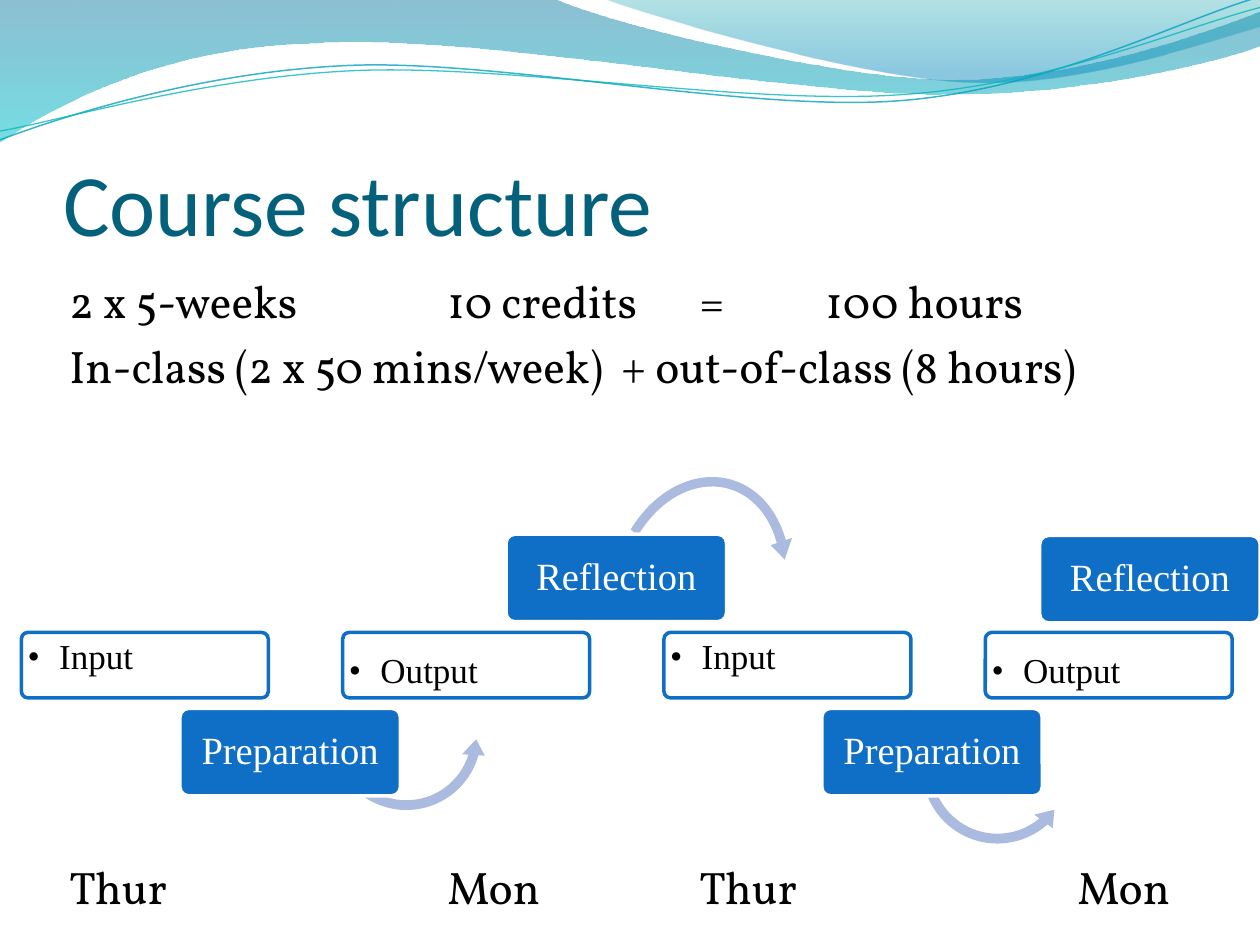
import math
from dataclasses import dataclass
from typing import Optional

import pptx
import pptx.dml.color
import pptx.enum.shapes
import pptx.enum.text
import pptx.oxml
import pptx.oxml.ns
import pptx.util

Pt = pptx.util.Pt
qn = pptx.oxml.ns.qn
Preset = pptx.enum.shapes.MSO_SHAPE
Anchor = pptx.enum.text.MSO_ANCHOR
Align = pptx.enum.text.PP_ALIGN

BLUE, PALE_BLUE, WHITE, BLACK = "0F6FC6", "ABBBDF", "FFFFFF", "000000"
SERIF = "Times New Roman"
STEP_LEFT, STEP_TOP, STEP_PITCH = 12.24, 361.4, 183.6


@dataclass
class Wave:
    start: tuple
    segments: list  # two numbers: straight line; six numbers: Bezier curve
    stops: tuple = ()  # (position, colour, opacity)
    line: Optional[tuple] = None  # (colour, width, opacity)
    rotation: float = 0


@dataclass
class Arrow:
    preset: int
    box: tuple
    rotation: float
    adjustments: tuple


@dataclass
class Stage:
    step: str
    inset_top: float
    block: str
    block_left: float
    block_top: float
    arrow: Optional[Arrow] = None


WAVES = [
    Wave((0, 0), [(316.8, -0.7), (342.7, 12.2, 478.1, 45.4, 545.8, 45.4),
                  (614.2, 45.4, 689.8, 18.7, 720, 6.5), (720.7, 25.9),
                  (707.8, 31.7, 626.4, 54.7, 537.1, 54),
                  (447.8, 54, 275, 20.2, 185, 24.5),
                  (92.9, 25.9, 33.1, 59.8, -0.7, 81.4), (0, 0)],
         stops=((0, "00739E", 45), (1, "00C5CE", 55))),
    Wave((344.9, -0.7), [(366.5, 7.9, 491, 44.6, 553.7, 46.8),
                         (616.3, 49.7, 691.9, 23, 720, 15.1), (720, 0), (344.9, -0.7)],
         stops=((0, "009FA6", 30), (0.8, "008ABE", 45))),
    Wave((0, 79.9), [(34.6, 67, 113.8, 41, 199.4, 37.4),
                     (284.4, 33.8, 427, 64.1, 513.4, 57.6),
                     (599.8, 51.1, 675.4, 10.8, 718.6, -1.4)],
         line=("05A0BE", 0.85, 78), rotation=357.3),
    Wave((0, 74.9), [(33.8, 69.1, 118.1, 43.9, 203.8, 40.3),
                     (290.2, 36.7, 429.8, 60.5, 516.2, 54),
                     (601.9, 48.2, 677.5, 15.1, 720, 4.3)],
         line=("08B6BA", 0.75, 78), rotation=357.3),
]

STAGES = [
    Stage("Input", 3, "Preparation", 102.8, 404.8,
          Arrow(Preset.LEFT_CIRCULAR_ARROW, (185.8, 373.7, 92.9, 92.9), 327.2,
                (0.06, 7.84, 29.51, 94.17, 0.07))),
    Stage("Output", 11, "Reflection", 289.2, 305.3,
          Arrow(Preset.CIRCULAR_ARROW, (346, 267.8, 108, 136.8), 16.3,
                (0.05, 6.64, 188.29, 122.44, 0.06))),
    Stage("Input", 3, "Preparation", 469.6, 404.8,
          Arrow(Preset.LEFT_CIRCULAR_ARROW, (523.2, 392.2, 93.6, 93.6), 0,
                (0.06, 7.81, 29.47, 94.15, 0.07))),
    Stage("Output", 11, "Reflection", 594.1, 306),
]


def set_color(color_format, color: str, opacity: int = 100) -> None:
    color_format.rgb = pptx.dml.color.RGBColor.from_string(color)
    if opacity < 100:
        element = color_format._color._xClr
        element.append(element.makeelement(qn("a:alpha"), {"val": str(opacity * 1000)}))


def set_fill(fill, color: str, opacity: int = 100) -> None:
    fill.solid()
    set_color(fill.fore_color, color, opacity)


def set_line(line, color: str, width: float, opacity: int = 100) -> None:
    line.width = Pt(width)
    set_fill(line.fill, color, opacity)


def set_frame(frame, insets: tuple, anchor) -> None:
    frame.word_wrap = True
    frame.auto_size = pptx.enum.text.MSO_AUTO_SIZE.NONE
    frame.vertical_anchor = anchor
    (frame.margin_left, frame.margin_top,
     frame.margin_right, frame.margin_bottom) = map(Pt, insets)


def add_run(paragraph, text: str, font: str, size: float, color: str) -> None:
    run = paragraph.add_run()
    run.text = text
    run.font.name = font
    run.font.size = Pt(size)
    set_color(run.font.color, color)


def add_tab_stops(paragraph, count: int = 8, interval: float = 72) -> None:
    properties = paragraph._p.get_or_add_pPr()
    tabs = properties.makeelement(qn("a:tabLst"), {})
    for index in range(1, count + 1):
        stop = {"pos": str(Pt(index * interval)), "algn": "l"}
        tabs.append(tabs.makeelement(qn("a:tab"), stop))
    properties.append(tabs)


def add_bullet(paragraph, indent: float) -> None:
    properties = paragraph._p.get_or_add_pPr()
    properties.set("marL", str(Pt(indent)))
    properties.set("indent", str(Pt(-indent)))
    for tag, attributes in (("a:buFont", {"typeface": SERIF}), ("a:buChar", {"char": "•"})):
        properties.append(properties.makeelement(qn(tag), attributes))


def add_preset(slide, preset, box: tuple, fill: str, opacity: int = 100):
    shape = slide.shapes.add_shape(preset, *map(Pt, box))
    shape.shadow.inherit = False
    set_fill(shape.fill, fill, opacity)
    shape.line.fill.background()
    return shape


def turn_back(points: list, rotation: float, center: tuple = (359.3, 40.8)) -> list:
    """Undo the rotation that the shape itself will apply."""
    cosine, sine = math.cos(math.radians(-rotation)), math.sin(math.radians(-rotation))
    offsets = [(x - center[0], y - center[1]) for x, y in points]
    return [(center[0] + x * cosine - y * sine, center[1] + x * sine + y * cosine)
            for x, y in offsets]


def bend_lines(shape, segments: list) -> None:
    """Join the three straight lines of each six-number segment into one curve."""
    lines = iter(list(shape._element.iter(qn("a:lnTo"))))
    for segment in segments:
        group = [next(lines) for _ in range(len(segment) // 2)]
        if len(group) == 3:
            curve = group[0].makeelement(qn("a:cubicBezTo"), {})
            group[0].addprevious(curve)
            for line in group:
                curve.append(line[0])
                line.getparent().remove(line)


def add_wave(slide, wave: Wave) -> None:
    points = [wave.start] + [segment[i:i + 2] for segment in wave.segments
                             for i in range(0, len(segment), 2)]
    vertices = [(Pt(x), Pt(y)) for x, y in turn_back(points, wave.rotation)]
    builder = slide.shapes.build_freeform(*vertices[0])
    builder.add_line_segments(vertices[1:], close=bool(wave.stops))
    shape = builder.convert_to_shape()
    bend_lines(shape, wave.segments)
    shape.shadow.inherit = False
    shape.rotation = wave.rotation
    if wave.line:
        shape.fill.background()
        set_line(shape.line, *wave.line)
        return
    shape.line.fill.background()
    shape.fill.gradient()
    shape.fill.gradient_angle = 270
    for stop, (position, color, opacity) in zip(shape.fill.gradient_stops, wave.stops):
        stop.position = position
        set_color(stop.color, color, opacity)


def add_step(slide, left: float, label: str, inset_top: float) -> None:
    shape = add_preset(slide, Preset.ROUNDED_RECTANGLE, (left, STEP_TOP, 141.1, 37.4), WHITE, 90)
    shape.adjustments[0] = 0.1
    set_line(shape.line, BLUE, 2)
    set_frame(shape.text_frame, (2.5, inset_top, 2.5, 0), Anchor.TOP)
    paragraph = shape.text_frame.paragraphs[0]
    paragraph.alignment = Align.LEFT
    paragraph.line_spacing = 0.9
    add_bullet(paragraph, 18)
    add_run(paragraph, label, SERIF, 20, BLACK)


def add_arrow(slide, arrow: Arrow) -> None:
    shape = add_preset(slide, arrow.preset, arrow.box, PALE_BLUE)
    shape.rotation = arrow.rotation
    for index, value in enumerate(arrow.adjustments):
        shape.adjustments[index] = value


def add_block(slide, left: float, top: float, label: str) -> None:
    shape = add_preset(slide, Preset.ROUNDED_RECTANGLE, (left, top, 126, 50), BLUE)
    shape.adjustments[0] = 0.1
    set_line(shape.line, WHITE, 2)
    set_frame(shape.text_frame, (3.6, 2.2, 3.6, 2.2), Anchor.MIDDLE)
    paragraph = shape.text_frame.paragraphs[0]
    paragraph.alignment = Align.CENTER
    paragraph.line_spacing = 0.9
    add_run(paragraph, label, SERIF, 22, WHITE)


def main() -> None:
    presentation = pptx.Presentation()
    presentation.slide_width, presentation.slide_height = Pt(720), Pt(540)
    slide = presentation.slides.add_slide(presentation.slide_layouts[5])
    # Wavy header
    for wave in WAVES:
        add_wave(slide, wave)
    # Title
    title = slide.shapes.title
    title.left, title.top, title.width, title.height = map(Pt, (36, 0, 648, 145.4))
    set_frame(title.text_frame, (0, 0, 0, 0), Anchor.BOTTOM)
    title.text_frame.paragraphs[0].alignment = Align.LEFT
    add_run(title.text_frame.paragraphs[0], "Course structure", "Calibri", 50, "04617B")
    # Workload lines, and the weekdays below the diagram
    body = slide.shapes.add_textbox(*map(Pt, (36, 152.6, 648, 387.4))).text_frame
    set_frame(body, (3.6, 3.6, 3.6, 3.6), Anchor.TOP)
    lines = [("2 x 5-weeks\t \t10 credits\t= \t100 hours", 0),
             ("In-class (2 x 50 mins/week)  + out-of-class (8 hours)", 6),
             ("Thur\t\t\tMon\t\tThur\t\t\tMon", 266.5)]
    for index, (text, space_before) in enumerate(lines):
        paragraph = body.add_paragraph() if index else body.paragraphs[0]
        paragraph.space_before = Pt(space_before)
        add_tab_stops(paragraph)
        add_run(paragraph, text, "Vollkorn", 26, BLACK)
    # Weekly cycle
    for index, stage in enumerate(STAGES):
        add_step(slide, STEP_LEFT + index * STEP_PITCH, stage.step, stage.inset_top)
        if stage.arrow:
            add_arrow(slide, stage.arrow)
        add_block(slide, stage.block_left, stage.block_top, stage.block)
    presentation.save("out.pptx")


if __name__ == "__main__":
    main()
